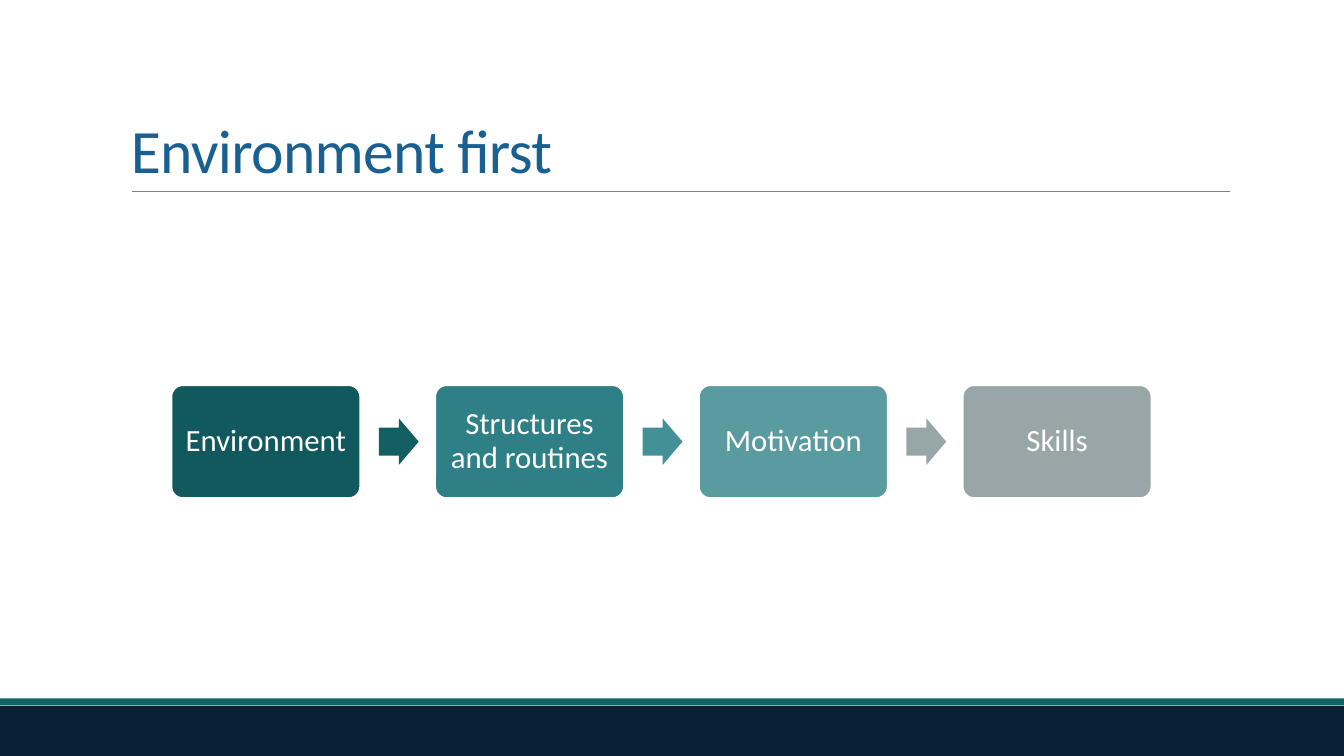
from dataclasses import dataclass

from lxml import etree
from pptx import Presentation
from pptx.dml.color import RGBColor
from pptx.enum import shapes, text
from pptx.oxml import ns
from pptx.util import Pt


@dataclass(frozen=True)
class Theme:
    font: str = "Calibri"
    title_size: int = 44
    step_size: int = 22
    title: str = "186092"
    rule: str = "808080"
    footer: str = "082031"
    footer_edge: str = "136266"
    white: str = "FFFFFF"
    steps: tuple = ("11595D", "2E8086", "5A9BA0", "99A6A8")
    arrows: tuple = ("125E61", "439197", "97A7A8")


theme = Theme()


def add_filled_shape(kind, left, top, width, height, color):
    shape = slide.shapes.add_shape(kind, Pt(left), Pt(top), Pt(width), Pt(height))
    shape.shadow.inherit = False
    shape.fill.solid()
    shape.fill.fore_color.rgb = RGBColor.from_string(color)
    shape.line.fill.background()
    return shape


def write(frame, words, size, color, line_spacing):
    frame.word_wrap = True
    frame.text = words
    para = frame.paragraphs[0]
    para.line_spacing = line_spacing
    span = para.runs[0]
    span.font.name = theme.font
    span.font.size = Pt(size)
    span.font.color.rgb = RGBColor.from_string(color)
    return para


deck = Presentation()
deck.slide_width, deck.slide_height = Pt(960), Pt(540)
slide = deck.slides.add_slide(deck.slide_layouts[6])

# Footer band
add_filled_shape(shapes.MSO_SHAPE.RECTANGLE, 0, 504, 960, 36, theme.footer)
add_filled_shape(shapes.MSO_SHAPE.RECTANGLE, 0, 498.8, 960, 5, theme.footer_edge)

# Title and the rule below it
rule = slide.shapes.add_connector(
    shapes.MSO_CONNECTOR.STRAIGHT, Pt(94.2), Pt(136.8), Pt(878.8), Pt(136.8))
rule.line.color.rgb = RGBColor.from_string(theme.rule)
rule.line.width = Pt(0.5)
etree.SubElement(rule._element.spPr, ns.qn("a:effectLst"))

title = slide.shapes.add_textbox(Pt(86.4), Pt(22.5), Pt(792), Pt(114.3))
title.text_frame.vertical_anchor = text.MSO_ANCHOR.BOTTOM
title_para = write(title.text_frame, "Environment first", theme.title_size, theme.title, 0.85)
title_para.runs[0].font._element.set("spc", "-50")

# Process steps, with an arrow after each but the last
steps = ("Environment", "Structures and routines", "Motivation", "Skills")
first_left, pitch = 122.6, 188.4
step_top, step_width, step_height = 275.3, 134.6, 80.4
arrow_offset, arrow_width, arrow_height = 148, 28.5, 33.4
arrow_top = step_top + (step_height - arrow_height) / 2

for index, (label, color) in enumerate(zip(steps, theme.steps)):
    left = first_left + index * pitch
    box = add_filled_shape(shapes.MSO_SHAPE.ROUNDED_RECTANGLE,
                           left, step_top, step_width, step_height, color)
    box.adjustments[0] = 0.1
    box.line.color.rgb = RGBColor.from_string(theme.white)
    box.line.width = Pt(1)
    frame = box.text_frame
    frame.margin_left = frame.margin_right = Pt(6.6)
    frame.margin_top = frame.margin_bottom = Pt(6.6)
    frame.vertical_anchor = text.MSO_ANCHOR.MIDDLE
    para = write(frame, label, theme.step_size, theme.white, 0.9)
    para.alignment = text.PP_ALIGN.CENTER

    if index < len(theme.arrows):
        arrow = add_filled_shape(shapes.MSO_SHAPE.RIGHT_ARROW, left + arrow_offset,
                                 arrow_top, arrow_width, arrow_height, theme.arrows[index])
        arrow.adjustments[0] = 0.6
        arrow.adjustments[1] = 0.5

deck.save("out.pptx")
